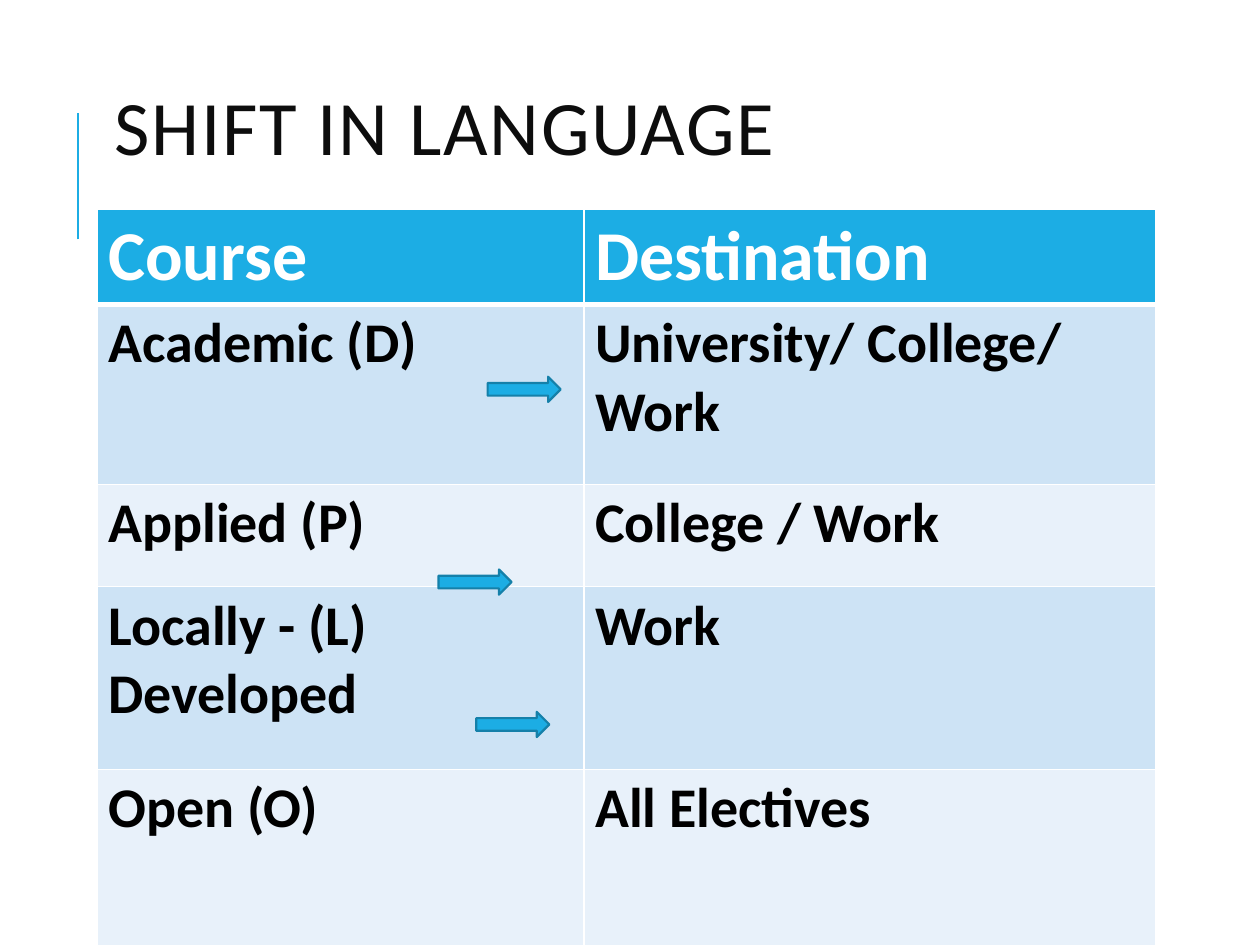
from dataclasses import dataclass

from lxml import etree
from pptx import Presentation
from pptx import util as u
from pptx.dml.color import RGBColor
from pptx.enum import shapes, text
from pptx.oxml.ns import qn


@dataclass(frozen=True)
class Theme:
    font: str = "Calibri"
    accent: str = "1CADE4"
    accent_dark: str = "1580A9"
    title: str = "0D0D0D"
    body: str = "000000"
    light: str = "FFFFFF"
    bands: tuple = ("CDE3F5", "E8F1FA")
    title_size: int = 44
    header_size: int = 40
    body_size: int = 32


@dataclass(frozen=True)
class Box:
    """An area of the slide, in inches."""
    left: float
    top: float
    width: float
    height: float

    def emu(self):
        return [u.Inches(n) for n in (self.left, self.top, self.width, self.height)]


THEME = Theme()
SLIDE = Box(0, 0, 10, 7.5)
TITLE_BOX = Box(0.81, 0.24, 7.97, 1.64)
RULE_BOX = Box(0.62, 0.9, 0, 1)
TABLE_BOX = Box(0.77, 1.66, 8.4, 5.85)
COLUMN_SHARES = (0.46, 0.54)
ROW_HEIGHTS = (0.73, 1.43, 0.81, 1.45, 1.43)
ARROW_SIZE = (0.58, 0.2)
# Left edge and top of each arrow, measured from the table's corner
ARROW_OFFSETS = ((2.71, 2.86), (3.1, 1.33), (3.01, 3.99))
ROWS = (
    ("Course", "Destination"),
    ("Academic (D)", "University/ College/ Work"),
    ("Applied (P)", "College / Work"),
    ("Locally - (L)\nDeveloped", "Work"),
    ("Open (O)", "All Electives"),
)


def apply(target, values):
    for name, value in values.items():
        setattr(target, name, value)


def format_font(font, size, color, bold):
    apply(font, {"name": THEME.font, "size": u.Pt(size), "bold": bold})
    font.color.rgb = RGBColor.from_string(color)


def format_line(line, color, width):
    line.color.rgb = RGBColor.from_string(color)
    line.width = u.Pt(width)


def add_title(slide, box, wording):
    title = slide.shapes.title
    apply(title, dict(zip(("left", "top", "width", "height"), box.emu())))
    frame = title.text_frame
    apply(frame, {"text": wording, "word_wrap": True,
                  "auto_size": text.MSO_AUTO_SIZE.NONE,
                  "vertical_anchor": text.MSO_ANCHOR.MIDDLE})
    paragraph = frame.paragraphs[0]
    apply(paragraph, {"alignment": text.PP_ALIGN.LEFT, "line_spacing": 0.8})
    font = paragraph.runs[0].font
    format_font(font, THEME.title_size, THEME.title, False)
    paragraph.runs[0]._r.get_or_add_rPr().set("spc", "100")


def add_rule(slide, box):
    left, top, width, height = box.emu()
    rule = slide.shapes.add_connector(
        shapes.MSO_CONNECTOR.STRAIGHT, left, top + height, left + width, top)
    format_line(rule.line, THEME.accent, 1.5)
    etree.SubElement(rule._element.spPr, qn("a:effectLst"))


def add_borders(cell, widths):
    """Draw the cell's borders; widths maps the sides L, R, T, B to points."""
    properties = cell._tc.get_or_add_tcPr()
    for side, width in widths.items():
        line = etree.SubElement(properties, qn(f"a:ln{side}"), w=str(u.Pt(width)))
        fill = etree.SubElement(line, qn("a:solidFill"))
        etree.SubElement(fill, qn("a:srgbClr"), val=THEME.light)


def format_cell(cell, wording, row):
    header = row == 0
    cell.text = wording
    apply(cell, {"margin_left": u.Inches(0.09), "margin_right": u.Inches(0.09),
                 "margin_top": u.Inches(0.04), "margin_bottom": u.Inches(0.04)})
    add_borders(cell, {"L": 1, "R": 1, "T": 3 if row == 1 else 1,
                       "B": 3 if header else 1})
    fill = THEME.accent if header else THEME.bands[(row - 1) % 2]
    cell.fill.solid()
    cell.fill.fore_color.rgb = RGBColor.from_string(fill)
    size = THEME.header_size if header else THEME.body_size
    color = THEME.light if header else THEME.body
    for paragraph in cell.text_frame.paragraphs:
        format_font(paragraph.runs[0].font, size, color, True)


def add_course_table(slide, box):
    table = slide.shapes.add_table(len(ROWS), len(ROWS[0]), *box.emu()).table
    for column, share in zip(table.columns, COLUMN_SHARES):
        column.width = u.Inches(box.width * share)
    for index, (height, wordings) in enumerate(zip(ROW_HEIGHTS, ROWS)):
        table.rows[index].height = u.Inches(height)
        for column, wording in enumerate(wordings):
            format_cell(table.cell(index, column), wording, index)


def add_arrows(slide, box):
    for across, down in ARROW_OFFSETS:
        place = Box(box.left + across, box.top + down, *ARROW_SIZE)
        arrow = slide.shapes.add_shape(shapes.MSO_SHAPE.RIGHT_ARROW, *place.emu())
        arrow.shadow.inherit = False
        arrow.fill.solid()
        arrow.fill.fore_color.rgb = RGBColor.from_string(THEME.accent)
        format_line(arrow.line, THEME.accent_dark, 1.25)


def main():
    presentation = Presentation()
    apply(presentation, {"slide_width": u.Inches(SLIDE.width),
                         "slide_height": u.Inches(SLIDE.height)})
    title_only = presentation.slide_layouts[5]
    slide = presentation.slides.add_slide(title_only)
    add_rule(slide, RULE_BOX)
    add_title(slide, TITLE_BOX, "SHIFT IN LANGUAGE")
    add_course_table(slide, TABLE_BOX)
    add_arrows(slide, TABLE_BOX)
    presentation.save("out.pptx")


if __name__ == "__main__":
    main()
